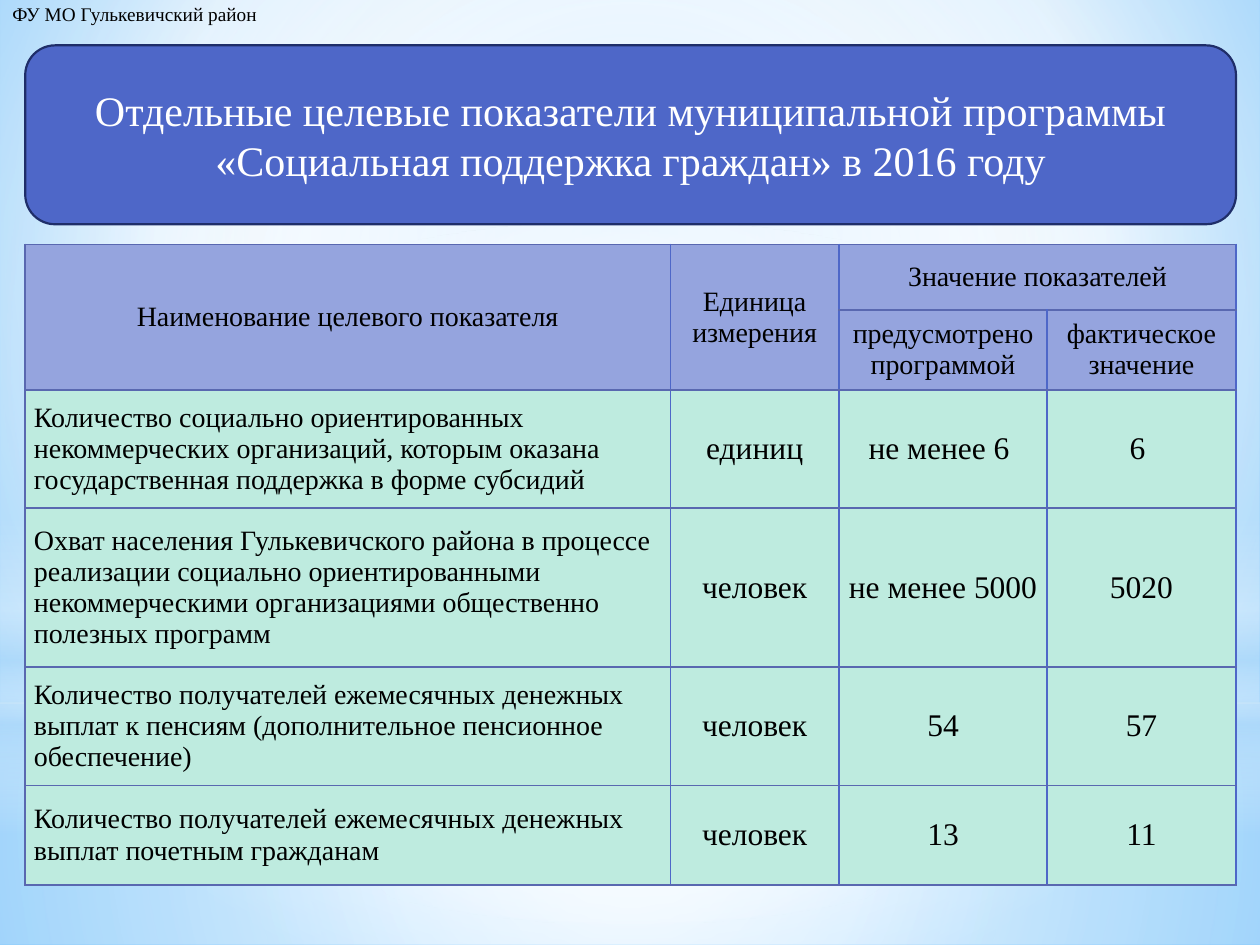
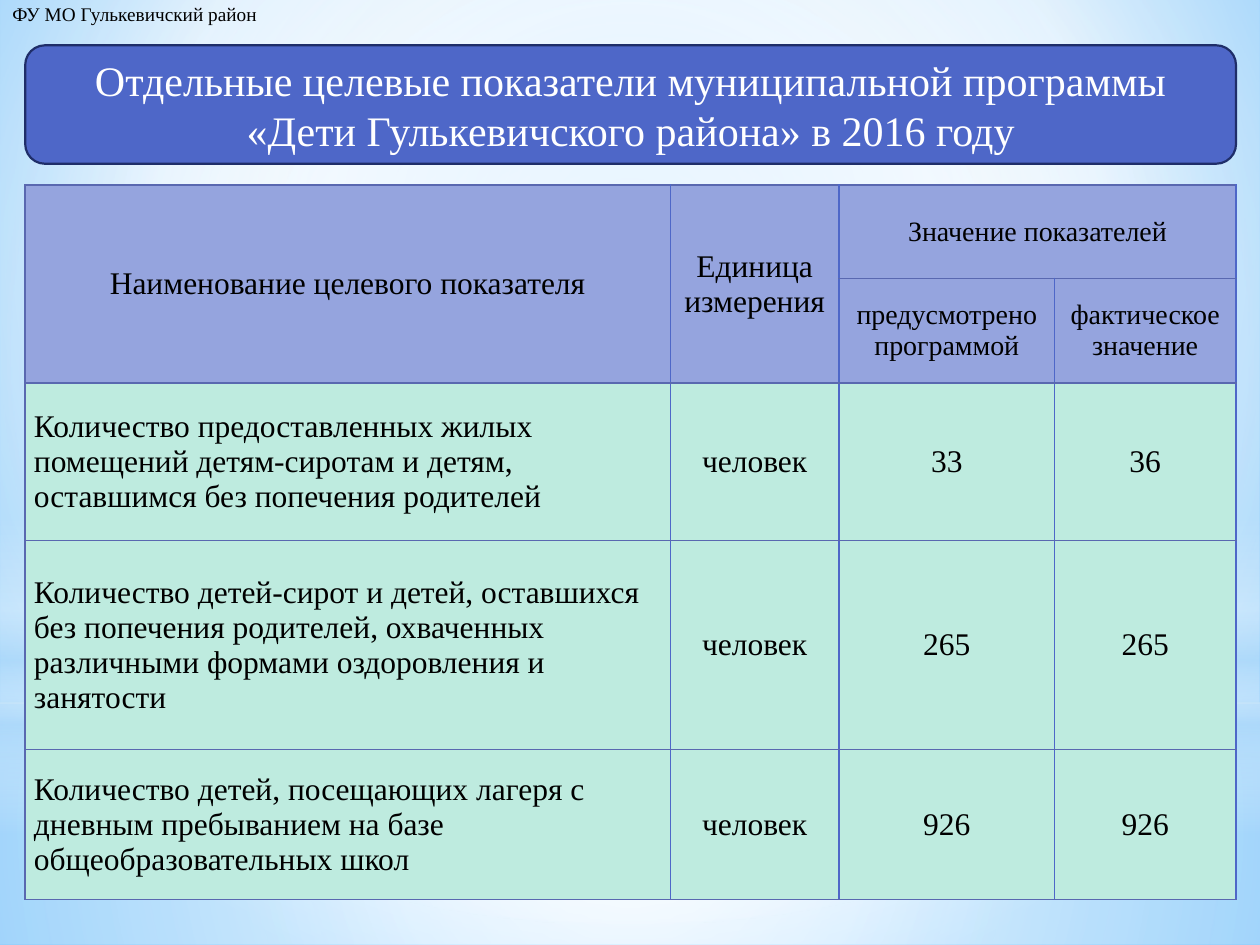
from dataclasses import dataclass

from lxml import etree
from pptx import Presentation
from pptx.dml.color import RGBColor
from pptx.enum.shapes import MSO_SHAPE
from pptx.enum.text import MSO_ANCHOR, MSO_AUTO_SIZE, PP_ALIGN
from pptx.oxml.ns import qn
from pptx.util import Inches, Pt

RECTANGLE = MSO_SHAPE.RECTANGLE
ROUNDED = MSO_SHAPE.ROUNDED_RECTANGLE
OVAL = MSO_SHAPE.OVAL
MIDDLE = MSO_ANCHOR.MIDDLE
FIT_SHAPE = MSO_AUTO_SIZE.SHAPE_TO_FIT_TEXT
CENTER = PP_ALIGN.CENTER
LEFT = PP_ALIGN.LEFT

GRID_COLUMNS, GRID_ROWS = 100, 75
UNIT = Inches(10) // GRID_COLUMNS
MARGIN = 2
CONTENT_WIDTH = 96.1
BANNER_TOP = 3.6
BLANK_LAYOUT = 6


@dataclass(frozen=True)
class Theme:
    font: str = "Times New Roman"
    ink: str = "000000"
    white: str = "FFFFFF"
    accent: str = "4E67C8"
    banner_edge: str = "1F2E69"
    rule: str = "5968B0"
    header: str = "95A4DE"
    body: str = "BEEBDF"
    haze: str = "B4DCFA"
    sky: str = "9ED5FF"
    deep_sky: str = "5BB9FF"
    owner_size: int = 11
    label_size: int = 16
    value_size: int = 18
    title_size: int = 24


THEME = Theme()
CENTRE_FOCUS = (50, 50, 50, 50)
BACKDROP = [(0, THEME.sky, 100), (60, THEME.white, 100), (100, THEME.deep_sky, 100)]
BACKDROP_FOCUS = (20, 10, 20, 60)
HAZE_LAYERS = [
    (RECTANGLE, 55.8, 19.2, CENTRE_FOCUS,
     [(0, THEME.white, 91), (37, THEME.white, 76), (100, THEME.haze, 79)]),
    (RECTANGLE, 0, 55.8, CENTRE_FOCUS,
     [(0, THEME.white, 89), (48, THEME.white, 62), (100, THEME.haze, 79)]),
    (RECTANGLE, 41.2, 25, None,
     [(0, THEME.white, 0), (29, THEME.white, 30), (45, THEME.haze, 40),
      (55, THEME.white, 26), (65, THEME.haze, 60), (100, THEME.white, 0)]),
    (OVAL, 17.5, 55.8, CENTRE_FOCUS,
     [(0, THEME.white, 100), (56, THEME.white, 0)]),
]

OWNER = "ФУ МО Гулькевичский район"
HEADINGS = [
    ["Наименование целевого показателя", "Единица\nизмерения", "Значение показателей", ""],
    ["", "", "предусмотрено программой", "фактическое значение"],
]
SUPPORT = [
    ("Количество социально ориентированных некоммерческих организаций, которым "
     "оказана государственная поддержка в форме субсидий", "единиц", "не менее 6 ", "6 "),
    ("Охват населения Гулькевичского района в процессе реализации социально "
     "ориентированными некоммерческими организациями общественно полезных программ",
     "человек", "не менее 5000", "5020"),
    ("Количество получателей ежемесячных денежных выплат к пенсиям "
     "(дополнительное пенсионное обеспечение)", "человек", "54", "57"),
    ("Количество получателей ежемесячных денежных выплат почетным гражданам",
     "человек", "13", "11"),
]
CHILDREN = [
    ("Количество предоставленных жилых помещений детям-сиротам и детям, оставшимся "
     "без попечения родителей", "человек", "33", "36"),
    ("Количество детей-сирот и детей, оставшихся без попечения родителей, охваченных "
     "различными формами оздоровления и занятости", "человек", "265", "265"),
    ("Количество детей, посещающих лагеря с дневным пребыванием на базе "
     "общеобразовательных школ", "человек", "926", "926"),
]


def grid(*counts):
    return [round(count * UNIT) for count in counts]


def color(value):
    return RGBColor.from_string(value)


def add_node(parent, tag, **attributes):
    return etree.SubElement(parent, qn(tag), {key: str(value) for key, value in attributes.items()})


def paint_gradient(fill, properties, stops, focus):
    fill.solid()
    solid = properties.find(qn("a:solidFill"))
    gradient = etree.Element(qn("a:gradFill"), rotWithShape="1")
    stop_list = add_node(gradient, "a:gsLst")
    for position, value, opacity in stops:
        stop = add_node(stop_list, "a:gs", pos=position * 1000)
        tint = add_node(stop, "a:srgbClr", val=value)
        if opacity < 100:
            add_node(tint, "a:alpha", val=opacity * 1000)
    if focus:
        circle = add_node(gradient, "a:path", path="circle")
        sides = {side: share * 1000 for side, share in zip("ltrb", focus)}
        add_node(circle, "a:fillToRect", **sides)
    else:
        add_node(gradient, "a:lin", ang=90 * 60000, scaled=0)
    properties.replace(solid, gradient)


def style_text(frame, text, size, ink=THEME.ink, align=LEFT):
    frame.text = text
    for para in frame.paragraphs:
        para.alignment = align
        for span in para.runs:
            span.font.name = THEME.font
            span.font.size = Pt(size)
            span.font.color.rgb = color(ink)


def add_backdrop(master, page):
    background = master.background.fill
    background.solid()
    properties = master.element.find(".//" + qn("p:bgPr"))
    paint_gradient(background, properties, BACKDROP, BACKDROP_FOCUS)
    for kind, top, height, focus, stops in HAZE_LAYERS:
        layer = page.shapes.add_shape(kind, *grid(0, top, GRID_COLUMNS, height))
        layer.shadow.inherit = False
        layer.line.fill.background()
        paint_gradient(layer.fill, layer.element.spPr, stops, focus)
        master.shapes.element.append(layer.element)


def add_owner(page):
    box = page.shapes.add_textbox(*grid(0, -0.3, 21.8, 2.9))
    box.text_frame.word_wrap = False
    box.text_frame.auto_size = FIT_SHAPE
    style_text(box.text_frame, OWNER, THEME.owner_size)


def add_banner(page, program, height):
    banner = page.shapes.add_shape(ROUNDED, *grid(MARGIN, BANNER_TOP, CONTENT_WIDTH, height))
    banner.shadow.inherit = False
    banner.fill.solid()
    banner.fill.fore_color.rgb = color(THEME.accent)
    banner.line.color.rgb = color(THEME.banner_edge)
    banner.line.width = Pt(1.25)
    banner.text_frame.vertical_anchor = MIDDLE
    banner.text_frame.word_wrap = True
    title = f"Отдельные целевые показатели муниципальной программы «{program}» в 2016 году"
    style_text(banner.text_frame, title, THEME.title_size, THEME.white, CENTER)


def style_cell(cell, fill, first_column):
    cell.vertical_anchor = MIDDLE
    cell.fill.solid()
    cell.fill.fore_color.rgb = color(fill)
    left = THEME.rule if first_column else THEME.accent
    borders = {"a:lnL": left, "a:lnR": THEME.accent, "a:lnT": THEME.rule, "a:lnB": THEME.rule}
    properties = cell._tc.get_or_add_tcPr()
    for position, (side, value) in enumerate(borders.items()):
        line = etree.Element(qn(side), w=str(Pt(1)))
        add_node(add_node(line, "a:solidFill"), "a:srgbClr", val=value)
        properties.insert(position, line)


def add_indicators(page, top, widths, heights, indicators, name_size):
    rows = HEADINGS + indicators
    frame = page.shapes.add_table(len(rows), len(widths),
                                  *grid(MARGIN, top, CONTENT_WIDTH, sum(heights)))
    table = frame.table
    table.first_row = table.horz_banding = False
    for column, width in zip(table.columns, grid(*widths)):
        column.width = width
    for row, height in zip(table.rows, grid(*heights)):
        row.height = height
    for row_index, texts in enumerate(rows):
        is_heading = row_index < len(HEADINGS)
        for column_index, text in enumerate(texts):
            cell = table.cell(row_index, column_index)
            is_name = column_index == 0
            style_cell(cell, THEME.header if is_heading else THEME.body, is_name)
            if is_heading:
                size = name_size if column_index < 2 else THEME.label_size
            else:
                size = name_size if is_name else THEME.value_size
                cell.margin_left = cell.margin_right = Inches(0.07)
                cell.margin_top = cell.margin_bottom = 0
            align = LEFT if is_name and not is_heading else CENTER
            style_text(cell.text_frame, text, size, align=align)
    for column_index in range(2):
        table.cell(0, column_index).merge(table.cell(1, column_index))
    table.cell(0, 2).merge(table.cell(0, 3))


def add_program(page, program, banner_height, table_top, widths, heights, indicators, name_size):
    add_owner(page)
    add_indicators(page, table_top, widths, heights, indicators, name_size)
    add_banner(page, program, banner_height)


def main():
    deck = Presentation()
    deck.slide_width, deck.slide_height = grid(GRID_COLUMNS, GRID_ROWS)
    layout = deck.slide_layouts[BLANK_LAYOUT]
    support_page, children_page = [deck.slides.add_slide(layout) for _ in range(2)]
    add_backdrop(deck.slide_master, support_page)
    add_program(support_page, "Социальная поддержка граждан", 14.2, 19.4,
                [51.2, 13.4, 16.5, 15], [5.2, 6.3, 9.4, 12.6, 9.4, 7.9],
                SUPPORT, THEME.label_size)
    add_program(children_page, "Дети Гулькевичского района", 9.4, 14.7,
                [51.2, 13.4, 17.1, 14.4], [7.4, 8.3, 12.5, 16.6, 11.9],
                CHILDREN, THEME.value_size)
    deck.save("out.pptx")


if __name__ == "__main__":
    main()
